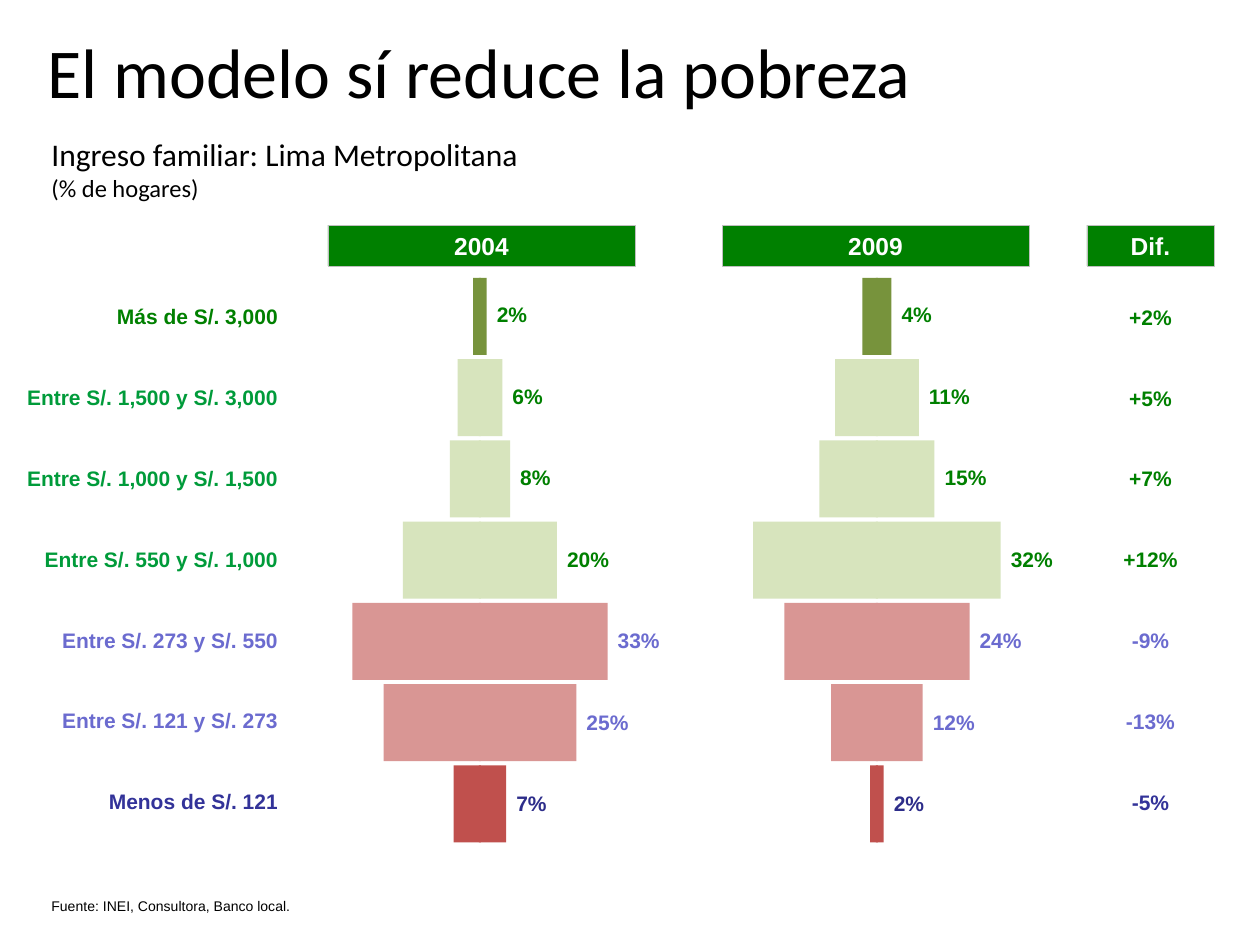
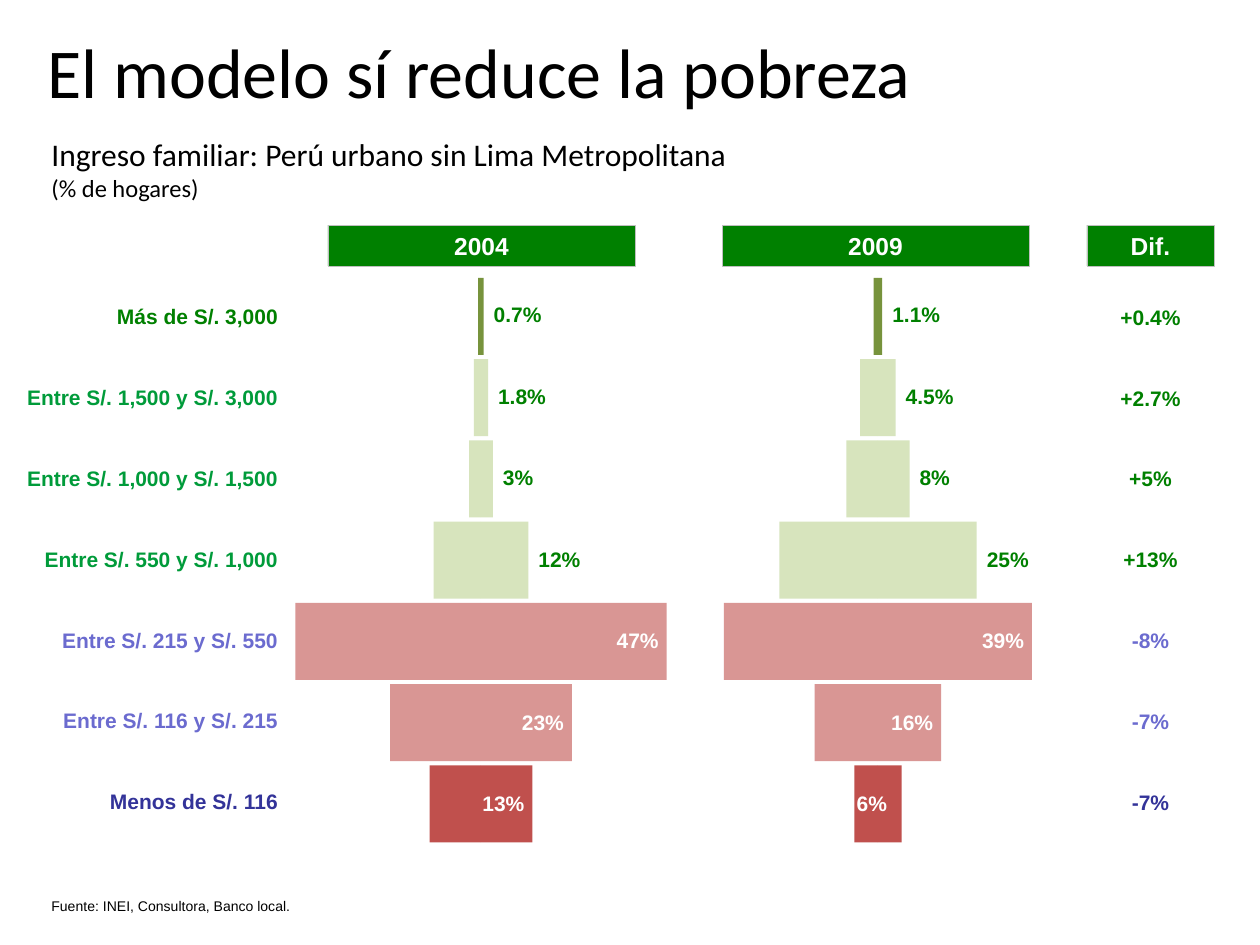
from pptx import Presentation
from pptx.dml.color import RGBColor
from pptx.enum.shapes import MSO_SHAPE
from pptx.enum.text import MSO_ANCHOR as ANCHOR, MSO_AUTO_SIZE as AUTO_SIZE
from pptx.enum.text import PP_ALIGN as ALIGN
from pptx.util import Emu, Pt

BLACK = RGBColor(0x00, 0x00, 0x00)
WHITE = RGBColor(0xFF, 0xFF, 0xFF)
GREEN = RGBColor(0x00, 0x80, 0x00)
MID_GREEN = RGBColor(0x00, 0x9B, 0x3A)
LILAC = RGBColor(0x6B, 0x6B, 0xCF)
INDIGO = RGBColor(0x33, 0x33, 0x99)
DARK_INDIGO = RGBColor(0x2D, 0x2D, 0x8A)
EDGE_GREY = RGBColor(0xBF, 0xBF, 0xBF)
OLIVE = RGBColor(0x77, 0x93, 0x3C)
PALE_OLIVE = RGBColor(0xD7, 0xE4, 0xBD)
PINK = RGBColor(0xD9, 0x96, 0x94)
RED = RGBColor(0xC0, 0x50, 0x4D)

TITLE = "El modelo sí reduce la pobreza"
UNIT = "(% de hogares)"
SOURCE = "Fuente: INEI, Consultora, Banco local."

# Income bands run from the richest (top) to the poorest (bottom).
BAND_COLORS = [GREEN] + [MID_GREEN] * 3 + [LILAC] * 2 + [INDIGO]
DIFF_COLORS = [GREEN] * 4 + [LILAC] * 2 + [INDIGO]
VALUE_COLORS = [GREEN] * 4 + [LILAC] * 2 + [DARK_INDIGO]
BAR_COLORS = [OLIVE] + [PALE_OLIVE] * 3 + [PINK] * 2 + [RED]

# Headings: text, left, width
HEADINGS = [("2004", 328, 307), ("2009", 722, 307), ("Dif.", 1087, 127)]

# axes: centre of each pyramid; overlap: how far each half crosses its centre;
# inside_from: first row whose value is written in white inside the bar
REGIONS = [
    dict(
        subtitle="Ingreso familiar: Lima Metropolitana",
        bands=["Más de S/. 3,000", "Entre S/. 1,500 y S/. 3,000",
               "Entre S/. 1,000 y S/. 1,500", "Entre S/. 550 y S/. 1,000",
               "Entre S/. 273 y S/. 550", "Entre S/. 121 y S/. 273",
               "Menos de S/. 121"],
        shares=[(2, 6, 8, 20, 33, 25, 7), (4, 11, 15, 32, 24, 12, 2)],
        diffs=["+2%", "+5%", "+7%", "+12%", "-9%", "-13%", "-5%"],
        axes=(480, 877), overlap=1, px_per_point=3.9, inside_from=7),
    dict(
        subtitle="Ingreso familiar: Perú urbano sin Lima Metropolitana",
        bands=["Más de S/. 3,000", "Entre S/. 1,500 y S/. 3,000",
               "Entre S/. 1,000 y S/. 1,500", "Entre S/. 550 y S/. 1,000",
               "Entre S/. 215 y S/. 550", "Entre S/. 116 y S/. 215",
               "Menos de S/. 116"],
        shares=[(0.7, 1.8, 3, 12, 47, 23, 13), (1.1, 4.5, 8, 25, 39, 16, 6)],
        diffs=["+0.4%", "+2.7%", "+5%", "+13%", "-8%", "-7%", "-7%"],
        axes=(481, 878), overlap=0, px_per_point=3.95, inside_from=4),
]

BAR_TOP, BAR_PITCH, BAR_HEIGHT = 278, 81.25, 77
VALUE_TOP, VALUE_PITCH, VALUE_HEIGHT = 302, 81.5, 25
VALUE_WIDTHS = {2: 33, 3: 44, 4: 50}  # by number of characters
TABLE_TOP, TABLE_HEIGHT = 277, 566


def px(n):
    return Emu(round(n * 914400 / 126))


def add_run(p, text, size, color, font="Arial", bold=False):
    r = p.add_run()
    r.text = text
    r.font.size, r.font.name, r.font.bold = Pt(size), font, bold
    r.font.color.rgb = color


def add_text(slide, box, lines, color=BLACK, font="Arial", anchor=ANCHOR.TOP):
    """Write (text, size) lines, one paragraph each."""
    tf = slide.shapes.add_textbox(*map(px, box)).text_frame
    tf.word_wrap, tf.vertical_anchor = True, anchor
    for i, (text, size) in enumerate(lines):
        p = tf.add_paragraph() if i else tf.paragraphs[0]
        add_run(p, text, size, color, font)


def add_value(slide, box, label, color):
    """Write a bar's value on one line, in a box that fits its text."""
    tf = slide.shapes.add_textbox(*map(px, box)).text_frame
    tf.margin_left = tf.margin_top = tf.margin_right = tf.margin_bottom = 0
    tf.word_wrap = False
    tf.auto_size = AUTO_SIZE.SHAPE_TO_FIT_TEXT
    add_run(tf.paragraphs[0], label, 12, color, bold=True)


def add_rect(slide, box, fill):
    sp = slide.shapes.add_shape(MSO_SHAPE.RECTANGLE, *map(px, box))
    sp.shadow.inherit = False
    sp.fill.solid()
    sp.fill.fore_color.rgb = fill
    sp.line.fill.background()
    return sp


def add_column(slide, left, width, texts, colors, align, margin):
    """Add a one-column table without fills."""
    table = slide.shapes.add_table(len(texts), 1, px(left), px(TABLE_TOP),
                                   px(width), px(TABLE_HEIGHT)).table
    table.first_row = table.horz_banding = False
    for row, (text, color) in enumerate(zip(texts, colors)):
        cell = table.cell(row, 0)
        cell.fill.background()
        cell.vertical_anchor = ANCHOR.MIDDLE
        cell.margin_left = cell.margin_right = cell.margin_top = px(margin)
        cell.margin_bottom = 0
        p = cell.text_frame.paragraphs[0]
        p.alignment = align
        add_run(p, text, 12, color, bold=True)


def add_heading(slide, text, left, width):
    sp = add_rect(slide, (left, 225, width, 41), GREEN)
    sp.line.color.rgb = EDGE_GREY
    sp.line.width = Pt(0.25)
    sp.text_frame.vertical_anchor = ANCHOR.MIDDLE
    p = sp.text_frame.paragraphs[0]
    p.alignment = ALIGN.CENTER
    add_run(p, text, 14, WHITE, bold=True)


def add_pyramid(slide, region, shares, axis):
    """Draw each share as two mirrored halves, with its value at the right."""
    overlap = region["overlap"]
    for row, share in enumerate(shares):
        half = share * region["px_per_point"]
        top = BAR_TOP + row * BAR_PITCH
        for left in (axis - overlap, axis + overlap - half):
            add_rect(slide, (left, top, half, BAR_HEIGHT), BAR_COLORS[row])

        label = f"{share}%"
        width = VALUE_WIDTHS[len(label)]
        bar_right = axis - overlap + half
        if row >= region["inside_from"]:
            gap = 12 if share < 10 else 6
            left, color = bar_right - gap - width, WHITE
        else:
            left, color = bar_right + 10, VALUE_COLORS[row]
        box = (left, VALUE_TOP + row * VALUE_PITCH, width, VALUE_HEIGHT)
        add_value(slide, box, label, color)


def add_region(prs, region):
    slide = prs.slides.add_slide(prs.slide_layouts[6])
    add_text(slide, (35, 22, 1171, 98), [(TITLE, 40)], font="Calibri")
    add_text(slide, (39, 118, 1218, 102),
             [(region["subtitle"], 18), (UNIT, 14)],
             font="Calibri", anchor=ANCHOR.MIDDLE)
    add_column(slide, 25, 253, region["bands"], BAND_COLORS, ALIGN.RIGHT, 0)
    add_column(slide, 1093, 115, region["diffs"], DIFF_COLORS, ALIGN.CENTER, 1)
    for heading in HEADINGS:
        add_heading(slide, *heading)
    for shares, axis in zip(region["shares"], region["axes"]):
        add_pyramid(slide, region, shares, axis)
    add_text(slide, (39, 891, 576, 30), [(SOURCE, 8)])


def main():
    prs = Presentation()
    prs.slide_width, prs.slide_height = px(1260), px(945)
    for region in REGIONS:
        add_region(prs, region)
    prs.save("out.pptx")


if __name__ == "__main__":
    main()
